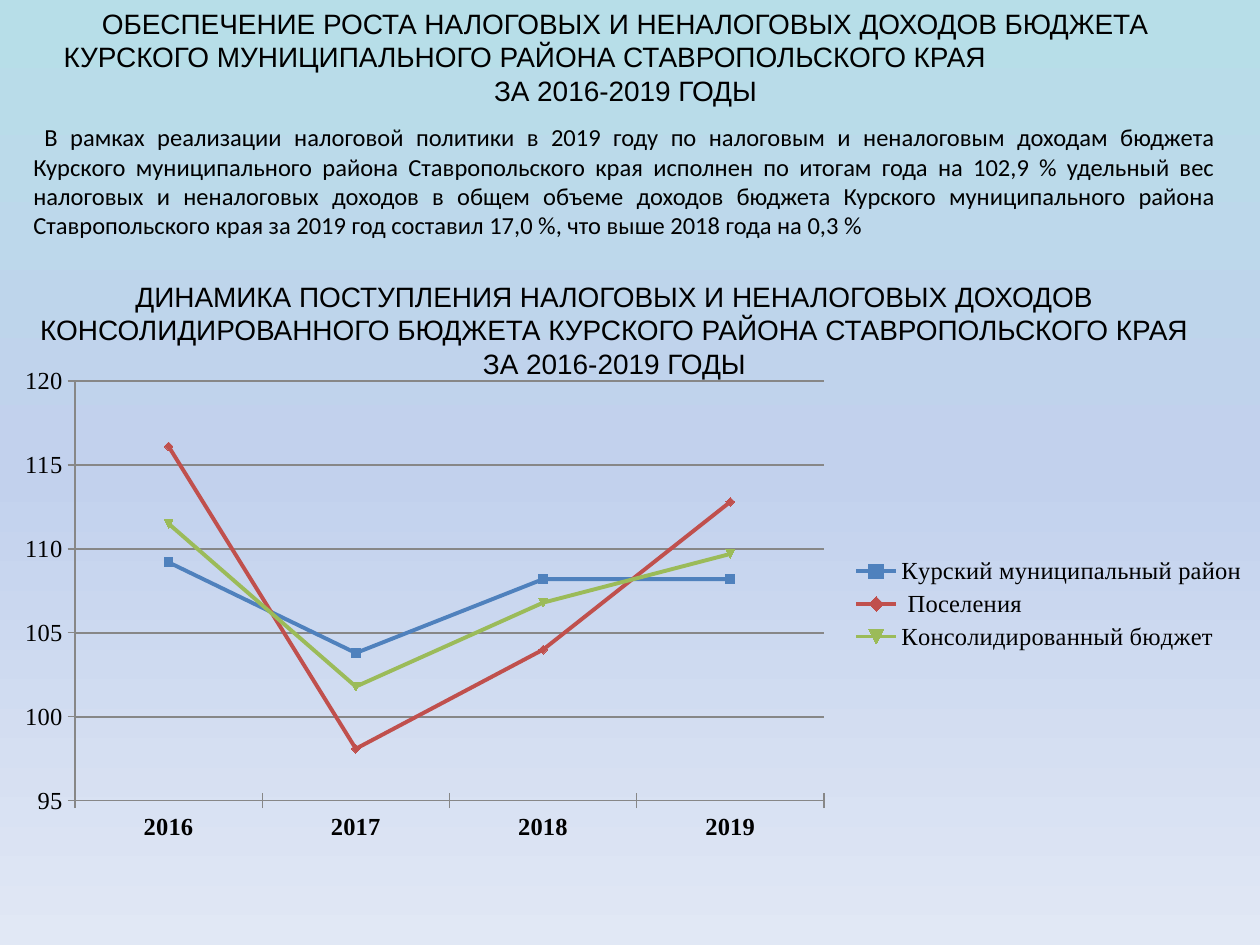
"""Builds a slide on budget revenue growth with a line chart of 2016-2019 dynamics."""
from copy import deepcopy

from lxml import etree
from pptx import Presentation
from pptx import util as u
from pptx.chart.data import CategoryChartData
from pptx.dml.color import RGBColor
from pptx.enum import chart as ch, text
from pptx.oxml import ns

BLACK = RGBColor(0, 0, 0)
GRAY = RGBColor(0x87, 0x87, 0x87)
BLUE = RGBColor(0x4F, 0x81, 0xBD)
RED = RGBColor(0xC0, 0x50, 0x4D)
GREEN = RGBColor(0x9B, 0xBB, 0x59)
BACKGROUND = [
    (0, RGBColor(0xB7, 0xDE, 0xE8)),
    (0.5, RGBColor(0xC2, 0xD1, 0xED)),
    (1, RGBColor(0xE1, 0xE8, 0xF5)),
]
CENTER, LEFT, JUSTIFY = text.PP_ALIGN.CENTER, text.PP_ALIGN.LEFT, text.PP_ALIGN.JUSTIFY

TITLE = [
    ("ОБЕСПЕЧЕНИЕ РОСТА НАЛОГОВЫХ И НЕНАЛОГОВЫХ ДОХОДОВ БЮДЖЕТА", CENTER, 0, 0),
    ("КУРСКОГО МУНИЦИПАЛЬНОГО РАЙОНА СТАВРОПОЛЬСКОГО КРАЯ", LEFT, 19, 0),
    ("ЗА 2016-2019 ГОДЫ", CENTER, 0, 0),
]
BODY = [(
    "В рамках реализации налоговой политики в 2019 году по налоговым и неналоговым "
    "доходам бюджета Курского муниципального района Ставропольского края исполнен по "
    "итогам года на 102,9 % удельный вес налоговых и неналоговых доходов в общем объеме "
    "доходов бюджета Курского муниципального района Ставропольского края за 2019 год "
    "составил 17,0 %, что выше 2018 года на 0,3 %", JUSTIFY, 0, 11)]
CHART_TITLE = [(
    "ДИНАМИКА ПОСТУПЛЕНИЯ НАЛОГОВЫХ И НЕНАЛОГОВЫХ ДОХОДОВ КОНСОЛИДИРОВАННОГО БЮДЖЕТА "
    "КУРСКОГО РАЙОНА СТАВРОПОЛЬСКОГО КРАЯ ЗА 2016-2019 ГОДЫ", CENTER, 0, 0)]
YEARS = ["2016", "2017", "2018", "2019"]
SERIES = [
    ("Курский муниципальный район", BLUE, (109.2, 103.8, 108.2, 108.2)),
    (" Поселения", RED, (116.1, 98.1, 104, 112.8)),
    ("Консолидированный бюджет", GREEN, (111.5, 101.8, 106.8, 109.7)),
]
TITLE_BOX = (32, 0, 1187, 149)
BODY_BOX = (21, 116, 1207, 131)
CHART_TITLE_BOX = (21, 273, 1187, 115)
CHART_BOX = (0, 357, 1260, 494)
PLOT_BOX = (75, 381, 749, 420)


def px(n):
    return u.Emu(round(n * 914400 / 126))


def write(sp, box, paragraphs, font="Arial", size=16):
    sp.left, sp.top, sp.width, sp.height = map(px, box)
    tf = sp.text_frame
    tf.word_wrap = True
    tf.auto_size = text.MSO_AUTO_SIZE.NONE
    tf.vertical_anchor = text.MSO_ANCHOR.TOP
    for i, (words, align, margin, indent) in enumerate(paragraphs):
        p = tf.add_paragraph() if i else tf.paragraphs[0]
        p.alignment = align
        pPr = p._p.get_or_add_pPr()
        pPr.set("marL", str(px(margin)))
        pPr.set("indent", str(px(indent)))
        r = p.add_run()
        r.text = words
        r.font.name, r.font.size = font, u.Pt(size)
        r.font.color.rgb = BLACK


def paint_background(s):
    fill = s.background.fill
    fill.gradient()
    fill.gradient_angle = 270
    stops = s._element.find(".//" + ns.qn("a:gsLst"))
    stops.insert(1, deepcopy(stops[0]))
    for stop, (position, color) in zip(fill.gradient_stops, BACKGROUND):
        stop.position = position
        stop.color.rgb = color


def place_plot(chart):
    area = chart._chartSpace.find(".//" + ns.qn("c:plotArea"))
    for old in area.findall(ns.qn("c:layout")):
        area.remove(old)
    layout = etree.Element(ns.qn("c:layout"))
    manual = etree.SubElement(layout, ns.qn("c:manualLayout"))
    left, top, width, height = CHART_BOX
    x, y, w, h = PLOT_BOX
    values = [
        ("layoutTarget", "inner"), ("xMode", "edge"), ("yMode", "edge"),
        ("x", (x - left) / width), ("y", (y - top) / height),
        ("w", w / width), ("h", h / height),
    ]
    for tag, value in values:
        etree.SubElement(manual, ns.qn("c:" + tag)).set("val", str(value))
    area.insert(0, layout)


def add_chart(s):
    data = CategoryChartData()
    data.categories = YEARS
    for name, _, values in SERIES:
        data.add_series(name, values)
    chart = s.shapes.add_chart(ch.XL_CHART_TYPE.LINE_MARKERS, *map(px, CHART_BOX), data).chart
    chart.has_title = False
    chart.font.name, chart.font.size = "Times New Roman", u.Pt(14)
    chart.font.color.rgb = BLACK
    chart.has_legend = True
    chart.legend.position = ch.XL_LEGEND_POSITION.RIGHT
    chart.legend.include_in_layout = False
    chart.plots[0].vary_by_categories = False
    for series, (_, color, _) in zip(chart.plots[0].series, SERIES):
        series.smooth = False
        series.format.line.color.rgb = color
        series.format.line.width = u.Pt(2.25)
        series.marker.format.fill.solid()
        series.marker.format.fill.fore_color.rgb = color
        series.marker.format.line.color.rgb = color
    years, values = chart.category_axis, chart.value_axis
    years.tick_labels.font.bold = True
    values.minimum_scale, values.maximum_scale, values.major_unit = 95, 120, 5
    values.has_major_gridlines = True
    values.major_gridlines.format.line.color.rgb = GRAY
    for axis in (years, values):
        axis.major_tick_mark = ch.XL_TICK_MARK.CROSS
        axis.format.line.color.rgb = GRAY
    place_plot(chart)


def main():
    prs = Presentation()
    prs.slide_width, prs.slide_height = u.Inches(10), u.Inches(7.5)
    s = prs.slides.add_slide(prs.slide_layouts[5])
    paint_background(s)
    write(s.shapes.title, TITLE_BOX, TITLE)
    write(s.shapes.add_textbox(0, 0, 0, 0), BODY_BOX, BODY, font="Calibri", size=14)
    write(s.shapes.add_textbox(0, 0, 0, 0), CHART_TITLE_BOX, CHART_TITLE)
    add_chart(s)
    prs.save("out.pptx")


if __name__ == "__main__":
    main()
